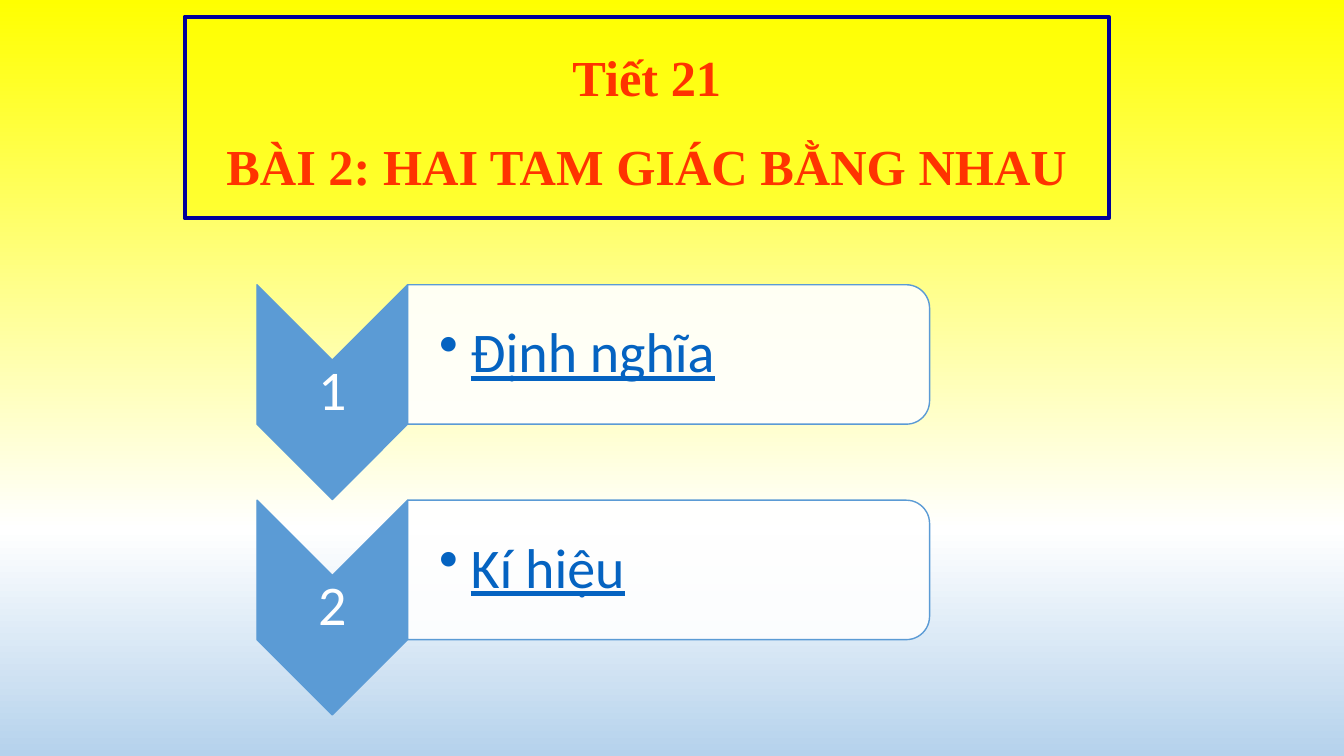
from copy import deepcopy
from math import cos, pi, sin

from lxml import etree
from pptx import Presentation
from pptx.dml.color import RGBColor
from pptx.enum.text import MSO_ANCHOR, MSO_AUTO_SIZE, PP_ALIGN
from pptx.oxml.ns import qn
from pptx.util import Pt

LEFT, CENTER = PP_ALIGN.LEFT, PP_ALIGN.CENTER
MIDDLE = MSO_ANCHOR.MIDDLE
NO_AUTOFIT = MSO_AUTO_SIZE.NONE

TITLE_LINES = ["Tiết 21", "BÀI 2: HAI TAM GIÁC BẰNG NHAU"]
SECTIONS = [("1", "Định nghĩa"), ("2", "Kí hiệu")]

BACKGROUND_STOPS = [(0, "FFFF00"), (0.7, "FFFFFF"), (1, "B5D2EC")]
YELLOW, NAVY, RED = "FFFF00", "000099", "FF3300"
BLUE, WHITE, LINK_BLUE = "5B9BD5", "FFFFFF", "0563C1"

SLIDE_WIDTH, SLIDE_HEIGHT = 960, 540
TITLE_BOX = (132, 12, 660, 144)
CHEVRON_LEFT, FIRST_TOP, ROW_STEP = 183.6, 203.4, 153.9
CHEVRON_WIDTH, CHEVRON_DEPTH = 107.6, 53.8
PANEL_WIDTH, PANEL_HEIGHT, CORNER_RADIUS = 372.8, 99.6, 16.6
CORNER_STEPS = 12
BULLET_INDENT = 22.5


def color(hex_string):
    return RGBColor.from_string(hex_string)


def paint(shape, fill, line, line_width, opacity=100):
    shape.fill.solid()
    shape.fill.fore_color.rgb = color(fill)
    if opacity < 100:
        fill_color = shape.fill._xPr.find(qn("a:solidFill"))[0]
        etree.SubElement(fill_color, qn("a:alpha"), val=str(opacity * 1000))
    shape.line.color.rgb = color(line)
    shape.line.width = Pt(line_width)


def add_bullet(paragraph, indent):
    properties = paragraph._p.get_or_add_pPr()
    properties.set("marL", str(Pt(indent)))
    properties.set("indent", str(-Pt(indent)))
    etree.SubElement(properties, qn("a:buChar"), char="•")


def write(shape, lines, *, font, size, text_color, insets, align=LEFT, bold=False,
          underline=False, wrap=True, line_spacing=1.0, gap=0, bullet_indent=0):
    frame = shape.text_frame
    frame.auto_size = NO_AUTOFIT
    frame.word_wrap = wrap
    frame.vertical_anchor = MIDDLE
    (frame.margin_left, frame.margin_top,
     frame.margin_right, frame.margin_bottom) = [Pt(inset) for inset in insets]
    for index, line in enumerate(lines):
        paragraph = frame.paragraphs[0] if index == 0 else frame.add_paragraph()
        paragraph.alignment = align
        paragraph.line_spacing = line_spacing
        paragraph.space_before = Pt(gap if index else 0)
        if bullet_indent:
            add_bullet(paragraph, bullet_indent)
        run = paragraph.add_run()
        run.text = line
        run.font.name = font
        run.font.size = Pt(size)
        run.font.bold = bold
        run.font.underline = underline
        run.font.color.rgb = color(text_color)


def add_outline(slide, points):
    start, *others = [(Pt(x), Pt(y)) for x, y in points]
    builder = slide.shapes.build_freeform(*start)
    builder.add_line_segments(others, close=True)
    shape = builder.convert_to_shape()
    shape.shadow.inherit = False
    return shape


def chevron_points(left, top):
    middle, right = left + CHEVRON_WIDTH / 2, left + CHEVRON_WIDTH
    bottom = top + PANEL_HEIGHT
    return [(left, top), (middle, top + CHEVRON_DEPTH), (right, top),
            (right, bottom), (middle, bottom + CHEVRON_DEPTH), (left, bottom)]


def panel_points(left, top):
    """Rectangle whose two right corners are rounded."""
    center_x = left + PANEL_WIDTH - CORNER_RADIUS
    bottom = top + PANEL_HEIGHT
    points = [(left, top)]
    for center_y, first_angle in ((top + CORNER_RADIUS, -pi / 2),
                                  (bottom - CORNER_RADIUS, 0)):
        for step in range(CORNER_STEPS + 1):
            angle = first_angle + step * pi / 2 / CORNER_STEPS
            points.append((center_x + CORNER_RADIUS * cos(angle),
                           center_y + CORNER_RADIUS * sin(angle)))
    return points + [(left, bottom)]


def set_background(slide):
    fill = slide.background.fill
    fill.gradient()
    fill.gradient_angle = 270
    last_stop = fill.gradient_stops[-1]._gs
    last_stop.addnext(deepcopy(last_stop))
    for stop, (position, hex_string) in zip(fill.gradient_stops, BACKGROUND_STOPS):
        stop.position = position
        stop.color.rgb = color(hex_string)


def add_title(slide):
    title = slide.shapes.title
    title.left, title.top, title.width, title.height = [Pt(value) for value in TITLE_BOX]
    paint(title, YELLOW, NAVY, 3, opacity=50)
    write(title, TITLE_LINES, font="Times New Roman", size=36, text_color=RED,
          insets=(7.2, 8, 7.2, 3.6), align=CENTER, bold=True, wrap=False, gap=20)


def add_section(slide, top, number, name):
    chevron = add_outline(slide, chevron_points(CHEVRON_LEFT, top))
    paint(chevron, BLUE, BLUE, 1)
    write(chevron, [number], font="Calibri", size=40, text_color=WHITE,
          insets=(2, 55.4, 2, 55.4), align=CENTER, line_spacing=0.9)

    panel = add_outline(slide, panel_points(CHEVRON_LEFT + CHEVRON_WIDTH, top))
    paint(panel, WHITE, BLUE, 1, opacity=90)
    write(panel, [name], font="Calibri", size=40, text_color=LINK_BLUE,
          insets=(22.5, 7.2, 7.2, 7.2), underline=True, line_spacing=0.9,
          bullet_indent=BULLET_INDENT)


def main():
    presentation = Presentation()
    presentation.slide_width = Pt(SLIDE_WIDTH)
    presentation.slide_height = Pt(SLIDE_HEIGHT)
    slide = presentation.slides.add_slide(presentation.slide_layouts[5])
    set_background(slide)
    add_title(slide)
    for index, (number, name) in enumerate(SECTIONS):
        add_section(slide, FIRST_TOP + index * ROW_STEP, number, name)
    presentation.save("out.pptx")


if __name__ == "__main__":
    main()
